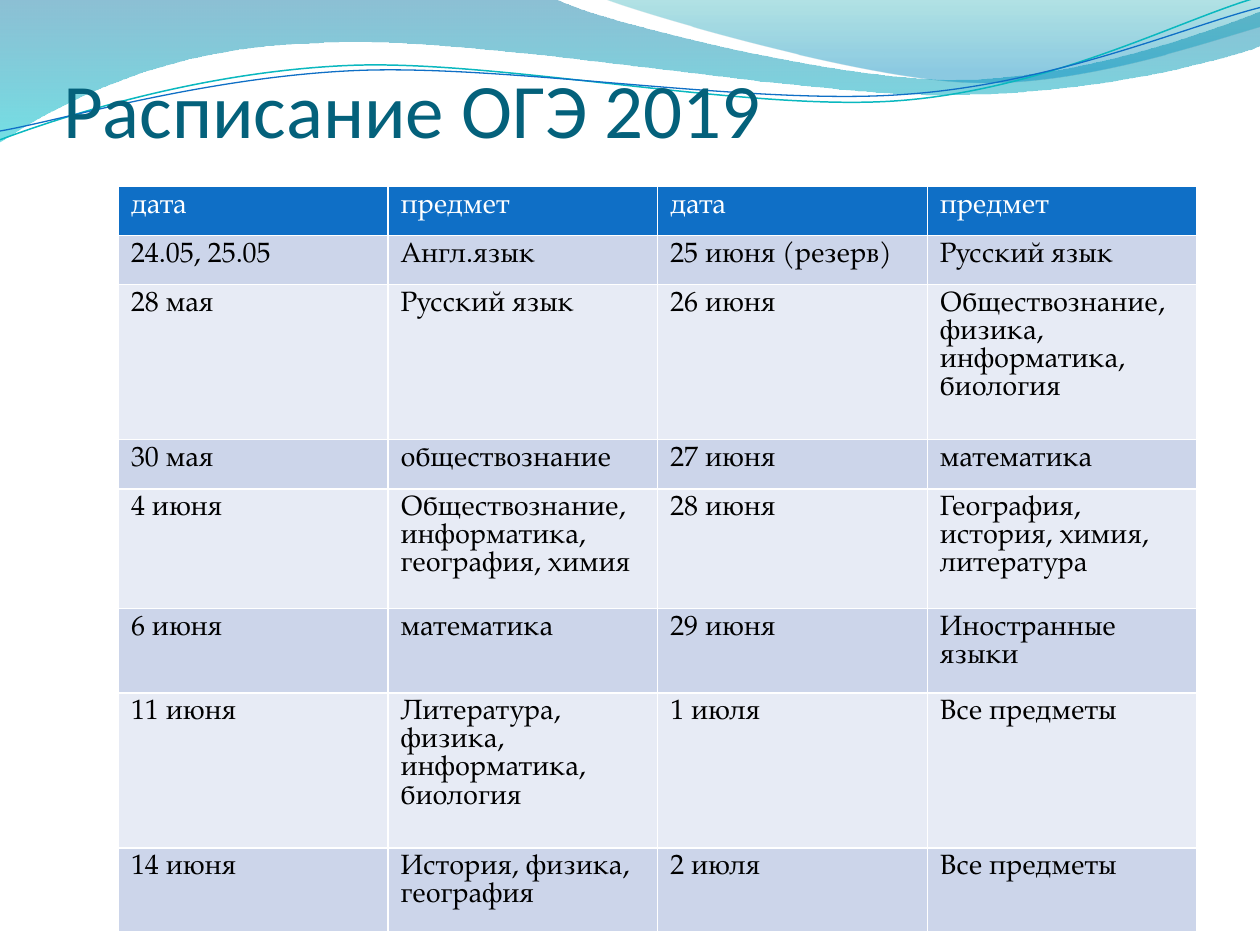
from lxml import etree
from pptx import Presentation, util as u
from pptx.dml.color import RGBColor
from pptx.enum import text
from pptx.oxml import ns

COLORS = {
    "title": "04617B", "header": "0F6FC6", "odd": "CCD5EA", "even": "E7EBF5",
    "white": "FFFFFF", "black": "000000", "teal": "0AB8BF",
    "sea": "0074A1", "aqua": "00C6CF", "lagoon": "00A1A9", "sky": "008BBF",
}
TITLE_FONT, BODY_FONT = "Calibri", "TeX Gyre Pagella"
UNITS = 100  # outline units per inch

# Outlines in inches: a pair is a corner, a triple of pairs is a cubic curve
BROAD_WAVE = [
    (0, 0), (4.4, -0.01),
    ((4.76, 0.17), (6.64, 0.63), (7.58, 0.63)),
    ((8.53, 0.63), (9.58, 0.26), (10, 0.09)), (10.01, 0.36),
    ((9.83, 0.44), (8.7, 0.76), (7.46, 0.75)),
    ((6.22, 0.75), (3.82, 0.28), (2.57, 0.34)),
    ((1.29, 0.36), (0.46, 0.83), (-0.01, 1.13)),
]
RIGHT_WAVE = [
    (4.79, -0.01),
    ((5.09, 0.11), (6.82, 0.62), (7.69, 0.65)),
    ((8.56, 0.69), (9.61, 0.32), (10, 0.21)), (10, 0),
]
TEAL_LINE = [
    (0, 1.11),
    ((0.48, 0.93), (1.58, 0.57), (2.77, 0.52)),
    ((3.95, 0.47), (5.93, 0.89), (7.13, 0.8)),
    ((8.33, 0.71), (9.38, 0.15), (9.98, -0.02)),
]
BLUE_LINE = [
    (0, 1.04),
    ((0.47, 0.96), (1.64, 0.61), (2.83, 0.56)),
    ((4.03, 0.51), (5.97, 0.84), (7.17, 0.75)),
    ((8.36, 0.67), (9.41, 0.21), (10, 0.06)),
]

SCHEDULE = [
    ("дата", "предмет", "дата", "предмет"),
    ("24.05, 25.05", "Англ.язык", "25 июня (резерв)", "Русский язык"),
    ("28 мая", "Русский язык", "26 июня", "Обществознание, физика, информатика, биология"),
    ("30 мая", "обществознание", "27 июня", "математика"),
    ("4 июня", "Обществознание, информатика, география, химия", "28 июня",
     "География, история, химия, литература"),
    ("6 июня", "математика", "29 июня", "Иностранные языки"),
    ("11 июня", "Литература, физика, информатика, биология", "1 июля", "Все предметы"),
    ("14 июня", "История, физика, география", "2 июля", "Все предметы"),
]
LINES_PER_ROW = [1, 1, 4, 1, 3, 2, 4, 2]


def color(name):
    return RGBColor.from_string(COLORS[name])


class SlideBuilder:
    def __init__(self, width, height):
        self.deck = Presentation()
        self.deck.slide_width, self.deck.slide_height = u.Inches(width), u.Inches(height)
        self.width, self.height = self.deck.slide_width, self.deck.slide_height
        self.page = self.deck.slides.add_slide(self.deck.slide_layouts[5])

    def place(self, left, top, width, height):
        """Shares of the slide's size as lengths."""
        return (int(left * self.width), int(top * self.height),
                int(width * self.width), int(height * self.height))

    def outline(self, parts, close):
        """Draw through all points, then join each triple into one cubic curve."""
        steps = [part if isinstance(part[0], tuple) else (part,) for part in parts]
        points = [(round(x * UNITS), round(y * UNITS)) for step in steps for x, y in step]
        builder = self.page.shapes.build_freeform(*points[0], scale=u.Inches(1) / UNITS)
        builder.add_line_segments(points[1:], close=close)
        shape = builder.convert_to_shape()
        shape.shadow.inherit = False
        segments = iter(list(shape.element.iter(ns.qn("a:lnTo"))))
        for step in steps[1:]:
            first, *others = [next(segments) for _ in step]
            if others:
                cubic = etree.Element(ns.qn("a:cubicBezTo"))
                first.addprevious(cubic)
                for segment in (first, *others):
                    cubic.append(segment[0])
                    segment.getparent().remove(segment)
        return shape

    def wave(self, parts, stops):
        shape = self.outline(parts, close=True)
        shape.line.fill.background()
        shape.fill.gradient()
        shape.fill.gradient_angle = 270
        for stop, (position, name, _) in zip(shape.fill.gradient_stops, stops):
            stop.position = position
            stop.color.rgb = color(name)
        for tone, (_, _, opacity) in zip(shape.element.spPr.iter(ns.qn("a:srgbClr")), stops):
            etree.SubElement(tone, ns.qn("a:alpha"), val=str(opacity * 1000))

    def curve(self, parts, name, weight):
        shape = self.outline(parts, close=False)
        shape.fill.background()
        shape.line.color.rgb = color(name)
        shape.line.width = u.Pt(weight)

    def title(self, words, *area):
        box = self.page.shapes.title
        box.left, box.top, box.width, box.height = self.place(*area)
        frame = box.text_frame
        frame.text = words
        frame.auto_size = text.MSO_AUTO_SIZE.NONE
        frame.vertical_anchor = text.MSO_ANCHOR.BOTTOM
        frame.margin_left = frame.margin_right = frame.margin_bottom = 0
        para = frame.paragraphs[0]
        para.alignment = text.PP_ALIGN.LEFT
        self.style(para, TITLE_FONT, 44, "title")
        self.page.shapes.element.append(box.element)  # in front of the waves

    def style(self, para, font, size, name):
        para.font.name, para.font.size = font, u.Pt(size)
        para.font.bold = False
        para.font.color.rgb = color(name)

    def border(self, cell):
        props = cell._tc.get_or_add_tcPr()
        for index, side in enumerate("LRTB"):
            edge = etree.Element(ns.qn(f"a:ln{side}"), w=str(u.Pt(1)))
            fill = etree.SubElement(edge, ns.qn("a:solidFill"))
            etree.SubElement(fill, ns.qn("a:srgbClr"), val=COLORS["white"])
            props.insert(index, edge)

    def table(self, rows, heights, *area):
        grid = self.page.shapes.add_table(len(rows), len(rows[0]), *self.place(*area)).table
        for row, height in zip(grid.rows, heights):
            row.height = u.Inches(height)
        for r, row in enumerate(rows):
            for c, words in enumerate(row):
                cell = grid.cell(r, c)
                cell.text = words
                cell.fill.solid()
                cell.fill.fore_color.rgb = color("header" if r == 0 else "odd" if r % 2 else "even")
                self.style(cell.text_frame.paragraphs[0], BODY_FONT, 16,
                           "black" if r else "white")
                self.border(cell)


def main():
    slide = SlideBuilder(10, 7.5)

    # Waves along the top edge
    slide.wave(BROAD_WAVE, [(0, "sea", 45), (1, "aqua", 55)])
    slide.wave(RIGHT_WAVE, [(0, "lagoon", 30), (0.8, "sky", 45)])
    slide.curve(TEAL_LINE, "teal", 0.85)
    slide.curve(BLUE_LINE, "header", 0.75)

    # Title
    slide.title("Расписание ОГЭ 2019", 0.05, -0.03 / 7.5, 0.9, 1.25 / 7.5)

    # Exam schedule: row height follows the number of text lines
    heights = [0.11 + 0.28 * lines for lines in LINES_PER_ROW]
    slide.table(SCHEDULE, heights, 0.094, 1.48 / 7.5, 0.856, sum(heights) / 7.5)

    slide.deck.save("out.pptx")


if __name__ == "__main__":
    main()
